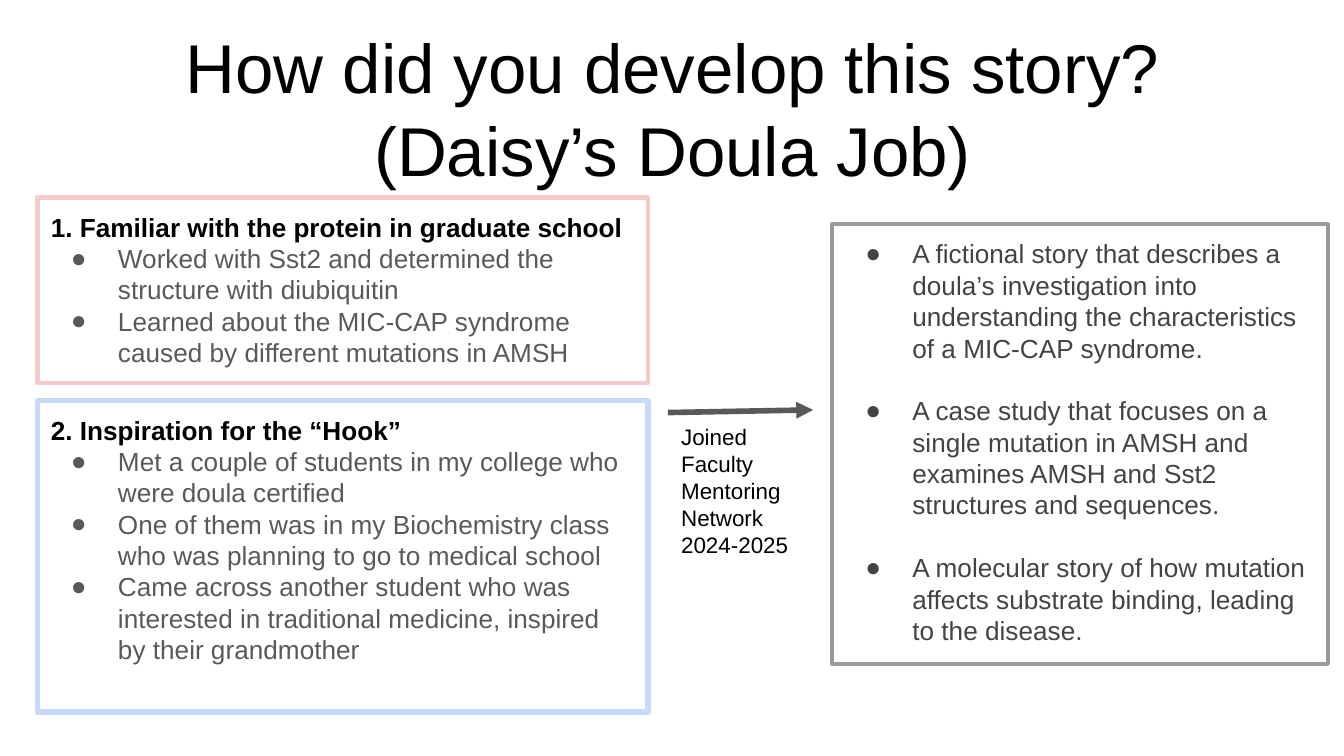
from dataclasses import dataclass

from lxml.etree import SubElement
from pptx import Presentation
from pptx.dml.color import RGBColor
from pptx.enum.shapes import MSO_CONNECTOR, MSO_SHAPE
from pptx.enum.text import MSO_ANCHOR, PP_ALIGN
from pptx.oxml.ns import qn
from pptx.util import Inches, Pt


@dataclass(frozen=True)
class Theme:
    font: str = "Arial"
    title_size: float = 37
    body_size: float = 14
    label_size: float = 12
    ink: str = "000000"
    muted: str = "595959"
    dark: str = "434343"
    pink: str = "F4CCCC"
    blue: str = "C9DAF8"
    gray: str = "999999"
    inset: float = 0.1
    indent: float = 0.5
    hanging: float = 0.35
    paragraph_gap: float = 16.8


THEME = Theme()


def add_span(para, text, size, color, bold=False):
    span = para.add_run()
    span.text = text
    span.font.name = THEME.font
    span.font.size = Pt(size)
    span.font.bold = bold
    span.font.color.rgb = RGBColor.from_string(color)


def prepare_frame(shape):
    frame = shape.text_frame
    frame.word_wrap = True
    frame.vertical_anchor = MSO_ANCHOR.TOP
    frame.margin_left = frame.margin_right = Inches(THEME.inset)
    frame.margin_top = frame.margin_bottom = Inches(THEME.inset)
    return frame


def add_bullet(para, color):
    properties = para._p.get_or_add_pPr()
    properties.set("marL", str(Inches(THEME.indent)))
    properties.set("indent", str(-Inches(THEME.hanging)))
    bullet_color = SubElement(properties, qn("a:buClr"))
    SubElement(bullet_color, qn("a:srgbClr"), val=color)
    SubElement(properties, qn("a:buFont"), typeface=THEME.font)
    SubElement(properties, qn("a:buChar"), char="●")


def add_text(page, box, lines, size, align=PP_ALIGN.LEFT):
    frame = prepare_frame(page.shapes.add_textbox(*map(Inches, box)))
    for index, line in enumerate(lines):
        para = frame.add_paragraph() if index else frame.paragraphs[0]
        para.alignment = align
        add_span(para, line, size, THEME.ink)


def add_panel(page, box, border, border_width, bullets, color, heading=None, gap=0):
    """Outlined box holding an optional bold heading and a bulleted list."""
    panel = page.shapes.add_shape(MSO_SHAPE.RECTANGLE, *map(Inches, box))
    panel.shadow.inherit = False
    panel.fill.background()
    panel.line.color.rgb = RGBColor.from_string(border)
    panel.line.width = Pt(border_width)
    frame = prepare_frame(panel)
    para = frame.paragraphs[0]
    para.alignment = PP_ALIGN.LEFT
    if heading:
        add_span(para, heading, THEME.body_size, THEME.ink, bold=True)
    for index, bullet in enumerate(bullets):
        if heading or index:
            para = frame.add_paragraph()
        para.alignment = PP_ALIGN.LEFT
        if index:
            para.space_before = Pt(gap)
        add_bullet(para, color)
        add_span(para, bullet, THEME.body_size, color)


def add_transition(page, box, label):
    """Arrow along the top of the box, with its label below."""
    left, top, width, height = box
    arrow = page.shapes.add_connector(
        MSO_CONNECTOR.STRAIGHT,
        Inches(left), Inches(top + 0.02), Inches(left + 1.08), Inches(top))
    arrow.line.color.rgb = RGBColor.from_string(THEME.muted)
    arrow.line.width = Pt(3)
    SubElement(arrow.line._get_or_add_ln(), qn("a:tailEnd"), type="triangle")
    SubElement(arrow._element.spPr, qn("a:effectLst"))
    add_text(page, box, [label], THEME.label_size)


def build_story_slide(page):
    # Title
    add_text(page, (0.79, 0.08, 8.43, 0.63),
             ["How did you develop this story?", "(Daisy’s Doula Job)"],
             THEME.title_size, PP_ALIGN.CENTER)

    # Origins of the story
    add_panel(page, (0.28, 1.47, 4.54, 1.38), THEME.pink, 2.25, [
        "Worked with Sst2 and determined the structure with diubiquitin",
        "Learned about the MIC-CAP syndrome caused by different mutations in AMSH",
    ], THEME.muted, heading="1. Familiar with the protein in graduate school")
    add_panel(page, (0.28, 2.98, 4.54, 2.32), THEME.blue, 3, [
        "Met a couple of students in my college who were doula certified",
        "One of them was in my Biochemistry class who was planning to go to medical school",
        "Came across another student who was interested in traditional medicine, "
        "inspired by their grandmother",
    ], THEME.muted, heading="2. Inspiration for the “Hook”")

    # Step between origins and outcome
    add_transition(page, (4.97, 3.05, 1.17, 1.21),
                   "Joined Faculty Mentoring Network 2024-2025")

    # Outcome
    add_panel(page, (6.19, 1.67, 3.69, 3.27), THEME.gray, 2.25, [
        "A fictional story that describes a doula’s investigation into "
        "understanding the characteristics of a MIC-CAP syndrome.",
        "A case study that focuses on a single mutation in AMSH and examines "
        "AMSH and Sst2 structures and sequences.",
        "A molecular story of how mutation affects substrate binding, "
        "leading to the disease.",
    ], THEME.dark, gap=THEME.paragraph_gap)


def main():
    deck = Presentation()
    # Widescreen page, 16:9
    deck.slide_width = Inches(10)
    deck.slide_height = deck.slide_width * 9 // 16
    build_story_slide(deck.slides.add_slide(deck.slide_layouts[6]))
    deck.save("out.pptx")


if __name__ == "__main__":
    main()
